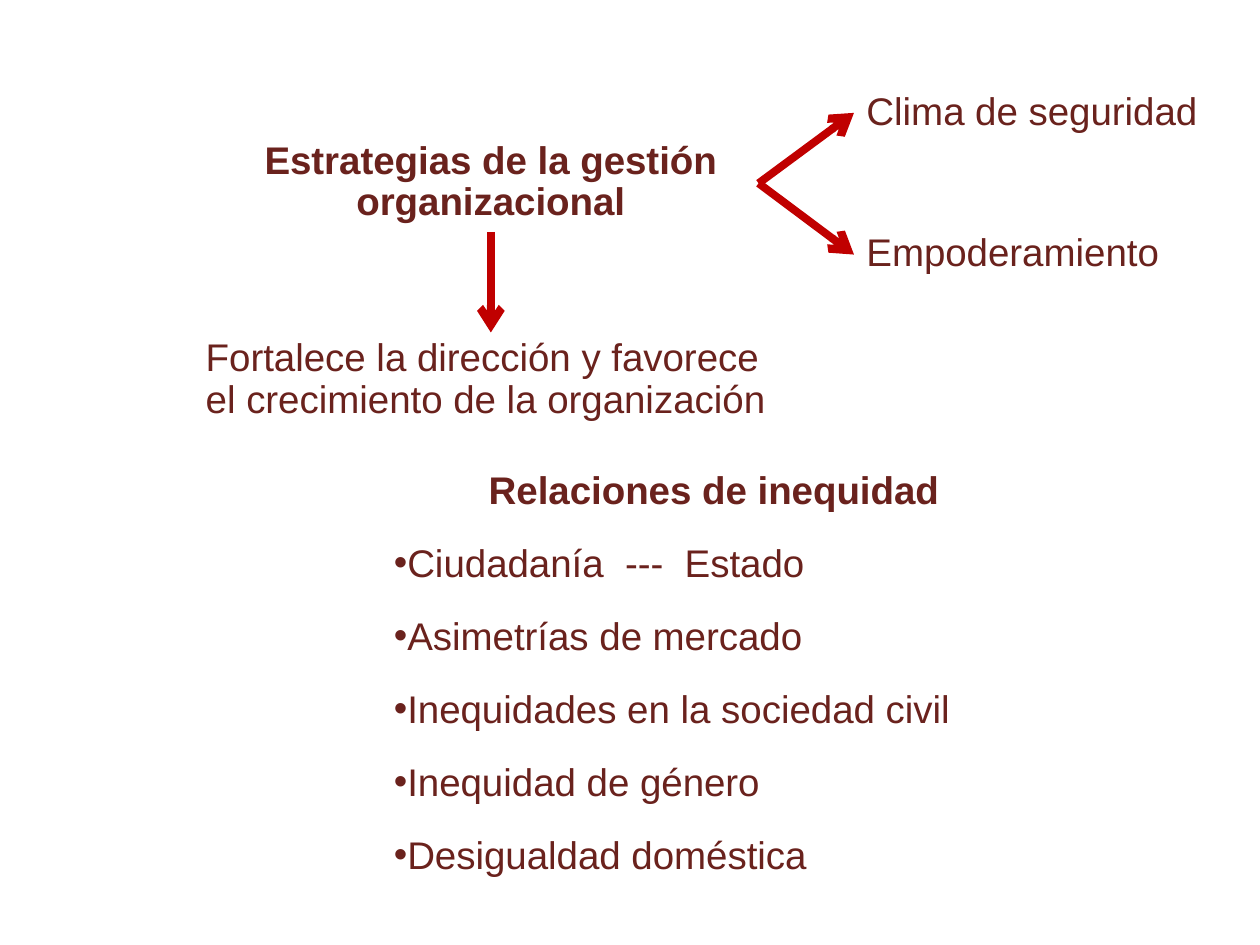
import pptx
import pptx.dml.color
import pptx.enum.shapes
import pptx.enum.text
import pptx.oxml.ns
import pptx.util
from lxml import etree

Pt = pptx.util.Pt
qn = pptx.oxml.ns.qn
LEFT = pptx.enum.text.PP_ALIGN.LEFT
CENTER = pptx.enum.text.PP_ALIGN.CENTER
TOP_SIDE, LEFT_SIDE, BOTTOM_SIDE, RIGHT_SIDE = range(4)


def color(hex_value):
    return pptx.dml.color.RGBColor.from_string(hex_value)


def apply(target, values):
    for name, value in values.items():
        setattr(target, name, value)


class StrategySlide:
    text_color = "6A221D"
    arrow_color = "C00000"
    arrow_width = 4.5
    bullet_indent = -27
    font_format = {"name": "Arial", "size": Pt(22)}
    paragraph_format = {"line_spacing": 0.9, "space_before": Pt(0), "space_after": Pt(18)}
    frame_format = {
        "auto_size": pptx.enum.text.MSO_AUTO_SIZE.SHAPE_TO_FIT_TEXT,
        "vertical_anchor": pptx.enum.text.MSO_ANCHOR.TOP,
    }

    def __init__(self, slide):
        self.slide = slide

    def paragraph(self, paragraph, text, bold=False, align=LEFT, bullet=False):
        paragraph.text = text
        apply(paragraph, {**self.paragraph_format, "alignment": align})
        if bullet:
            properties = paragraph._p.get_or_add_pPr()
            properties.set("marL", "0")
            properties.set("indent", str(Pt(self.bullet_indent)))
            etree.SubElement(properties, qn("a:buFont")).set("typeface", "Arial")
            etree.SubElement(properties, qn("a:buChar")).set("char", "•")
        apply(paragraph.font, {**self.font_format, "bold": bold})
        paragraph.font.color.rgb = color(self.text_color)

    def title(self, text, left, top, width, height):
        title = self.slide.shapes.title
        box = {"left": left, "top": top, "width": width, "height": height}
        apply(title, {side: Pt(length) for side, length in box.items()})
        apply(title.text_frame, {**self.frame_format, "word_wrap": True})
        self.paragraph(title.text_frame.paragraphs[0], text, True, CENTER)
        return title

    def text(self, text, left, top, width, height, wrap=True, **style):
        box = self.slide.shapes.add_textbox(Pt(left), Pt(top), Pt(width), Pt(height))
        apply(box.text_frame, {**self.frame_format, "word_wrap": wrap})
        self.paragraph(box.text_frame.paragraphs[0], text, **style)
        return box

    def bullets(self, box, items):
        for item in items:
            self.paragraph(box.text_frame.add_paragraph(), item, bullet=True)

    def arrow(self, source, source_side, target, target_side):
        arrow = self.slide.shapes.add_connector(
            pptx.enum.shapes.MSO_CONNECTOR.STRAIGHT, 0, 0, 0, 0
        )
        arrow.begin_connect(source, source_side)
        arrow.end_connect(target, target_side)
        arrow.line.color.rgb = color(self.arrow_color)
        arrow.line.width = Pt(self.arrow_width)
        properties = arrow._element.spPr
        etree.SubElement(properties.find(qn("a:ln")), qn("a:tailEnd")).set("type", "arrow")
        etree.SubElement(properties, qn("a:effectLst"))


def main():
    deck = pptx.Presentation()
    deck.slide_width, deck.slide_height = Pt(720), Pt(540)
    page = StrategySlide(deck.slides.add_slide(deck.slide_layouts[5]))

    strategies = page.title("Estrategias de la gestión organizacional", 127.5, 77, 306, 55.5)
    safety = page.text("Clima de seguridad", 488, 49, 206, 31, wrap=False)
    empowerment = page.text("Empoderamiento", 488, 130, 183.5, 31, wrap=False)
    growth = page.text(
        "Fortalece la dirección y favorece el crecimiento de la organización",
        110.5, 190, 340, 55.5,
    )
    for outcome in (safety, empowerment):
        page.arrow(strategies, RIGHT_SIDE, outcome, LEFT_SIDE)
    page.arrow(strategies, BOTTOM_SIDE, growth, TOP_SIDE)

    inequity = page.text(
        "Relaciones de inequidad", 218, 265.5, 380, 242, bold=True, align=CENTER
    )
    page.bullets(inequity, [
        "Ciudadanía  ---  Estado",
        "Asimetrías de mercado",
        "Inequidades en la sociedad civil",
        "Inequidad de género",
        "Desigualdad doméstica",
    ])
    deck.save("out.pptx")


if __name__ == "__main__":
    main()
